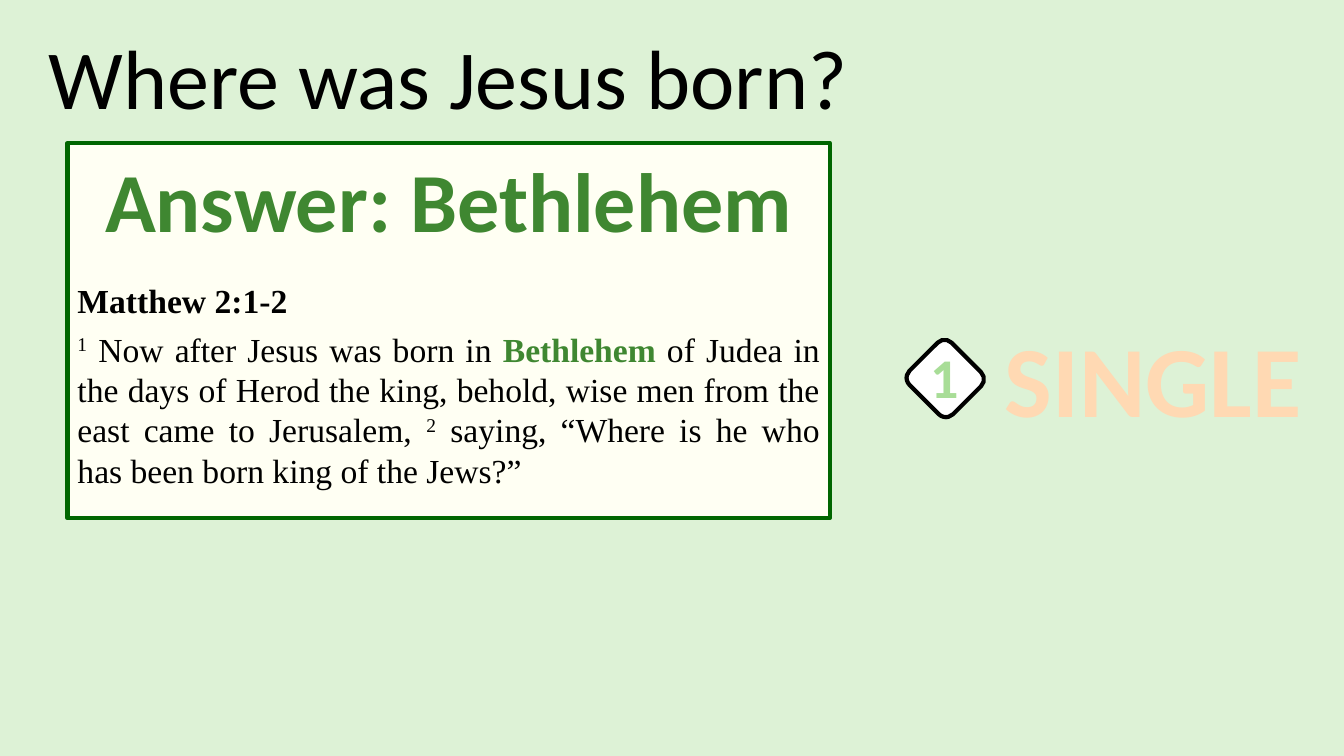
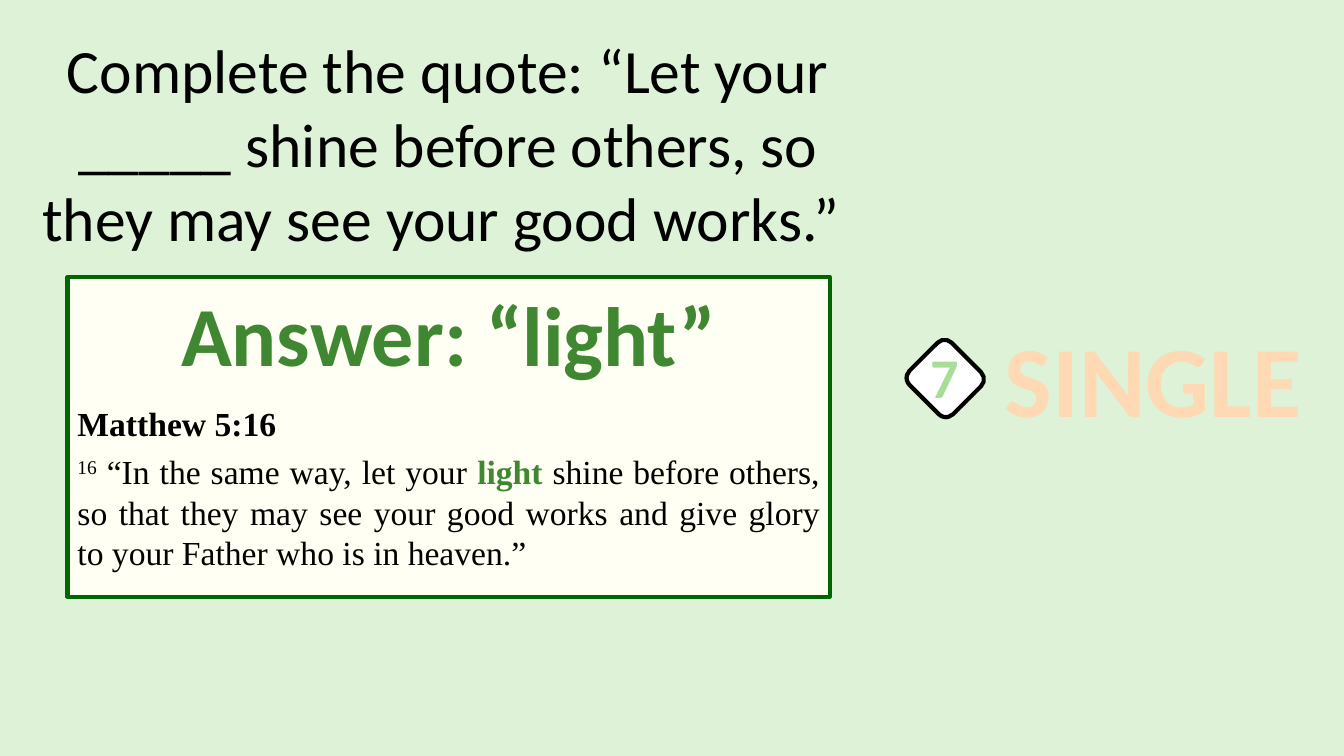
import pptx
import pptx.util
import pptx.dml.color
import pptx.enum.shapes
import pptx.enum.text
import pptx.oxml
import pptx.oxml.ns

Inches = pptx.util.Inches
Pt = pptx.util.Pt
ALIGN = pptx.enum.text.PP_ALIGN
ANCHOR = pptx.enum.text.MSO_ANCHOR
SHAPE = pptx.enum.shapes.MSO_SHAPE

SANS, SERIF = "Calibri", "Times New Roman"
PALE, CREAM, WHITE, BLACK = "DDF2D6", "FFFFF3", "FFFFFF", "000000"
EDGE, GREEN, MINT, PEACH = "006600", "3F8731", "A8DD97", "FFD9B3"

QUIZ = [
    dict(
        num="1", ask="Where was Jesus born?", size=60,
        ask_box=(0.25, 0.2, 8.39, 1.11), card_box=(0.67, 1.42, 7.56, 3.72),
        reply="Answer: Bethlehem", gap=22, source="Matthew 2:1-2",
        verse=[
            ("1", "sup"), (" Now after Jesus was born in ", ""), ("Bethlehem", "key"),
            (" of Judea in the days of Herod the king, behold, wise men from the"
             " east came to Jerusalem, ", ""),
            ("2", "sup"),
            (" saying, “Where is he who has been born king of the Jews?”", ""),
        ],
    ),
    dict(
        num="7", size=44,
        ask="Complete the quote: “Let your _____ shine before others, so they may"
            " see your good works.” ",
        ask_box=(0.25, 0.27, 8.39, 2.32), card_box=(0.67, 2.75, 7.56, 3.17),
        reply="Answer: “light”", gap=14, source="Matthew 5:16",
        verse=[
            ("16", "sup"), (" “In the same way, let your ", ""), ("light", "key"),
            (" shine before others, so that they may see your good works and give"
             " glory to your Father who is in heaven.”", ""),
        ],
    ),
]


def color(code):
    return pptx.dml.color.RGBColor.from_string(code)


def place(shape, box):
    shape.left, shape.top, shape.width, shape.height = map(Inches, box)


def style(para, face, size, tint, bold=False, align=ALIGN.CENTER):
    para.alignment = align
    for run in para.runs:
        font = run.font
        font.name, font.size, font.bold = face, Pt(size), bold
        font.color.rgb = color(tint)


def panel(slide, kind, box, fill, edge):
    shape = slide.shapes.add_shape(kind, *map(Inches, box))
    shape.shadow.inherit = False
    shape.fill.solid()
    shape.fill.fore_color.rgb = color(fill)
    shape.line.color.rgb = color(edge)
    shape.line.width = Pt(3)
    return shape


def label(slide, box, text, size, tint):
    shape = slide.shapes.add_textbox(*map(Inches, box))
    shape.text_frame.word_wrap = False
    para = shape.text_frame.paragraphs[0]
    para.text = text
    style(para, SANS, size, tint, True)
    return para.runs[0]


def outline(run, tint, width):
    line = pptx.oxml.parse_xml(
        f'<a:ln {pptx.oxml.ns.nsdecls("a")} w="{Pt(width)}"><a:solidFill>'
        f'<a:srgbClr val="{tint}"/></a:solidFill></a:ln>')
    run._r.get_or_add_rPr().insert(0, line)


def title(slide, box, text, size):
    shape = slide.shapes.title
    place(shape, box)
    frame = shape.text_frame
    frame.text = text
    frame.word_wrap = True
    frame.auto_size = pptx.enum.text.MSO_AUTO_SIZE.NONE
    frame.vertical_anchor = ANCHOR.TOP
    style(frame.paragraphs[0], SANS, size, BLACK)


def card(slide, box, item):
    frame = panel(slide, SHAPE.RECTANGLE, box, CREAM, EDGE).text_frame
    frame.word_wrap = True
    frame.vertical_anchor = ANCHOR.TOP

    reply = frame.paragraphs[0]
    reply.text = item["reply"]
    reply.space_after = Pt(item["gap"])
    style(reply, SANS, 60, GREEN, True)

    source = frame.add_paragraph()
    source.text = item["source"]
    source.space_after = Pt(6)
    style(source, SERIF, 24, BLACK, True, ALIGN.LEFT)

    verse = frame.add_paragraph()
    for text, kind in item["verse"]:
        verse.add_run().text = text
    style(verse, SERIF, 24, BLACK, False, ALIGN.JUSTIFY)
    for run, (text, kind) in zip(verse.runs, item["verse"]):
        if kind == "key":
            run.font.bold = True
            run.font.color.rgb = color(GREEN)
        elif kind == "sup":
            run._r.get_or_add_rPr().set("baseline", "30000")


def badge(slide, box, num):
    left, top, width, height = box
    tile = panel(slide, SHAPE.ROUNDED_RECTANGLE, (left, top + 0.11, 0.61, 0.59),
                 WHITE, BLACK)
    tile.rotation = 45
    run = label(slide, (left + 0.05, top, 0.49, height), num, 40, MINT)
    outline(run, BLACK, 2.25)
    label(slide, (left + 0.67, top - 0.26, width - 0.67, 1.32), "SINGLE", 72, PEACH)


def build(deck, item):
    slide = deck.slides.add_slide(deck.slide_layouts[5])
    title(slide, item["ask_box"], item["ask"], item["size"])
    card(slide, item["card_box"], item)
    badge(slide, (9.07, 3.35, 4.07, 0.77), item["num"])


def main():
    deck = pptx.Presentation()
    deck.slide_width, deck.slide_height = Inches(13.33), Inches(7.5)
    back = deck.slide_master.background.fill
    back.solid()
    back.fore_color.rgb = color(PALE)
    for item in QUIZ:
        build(deck, item)
    deck.save("out.pptx")


if __name__ == "__main__":
    main()
